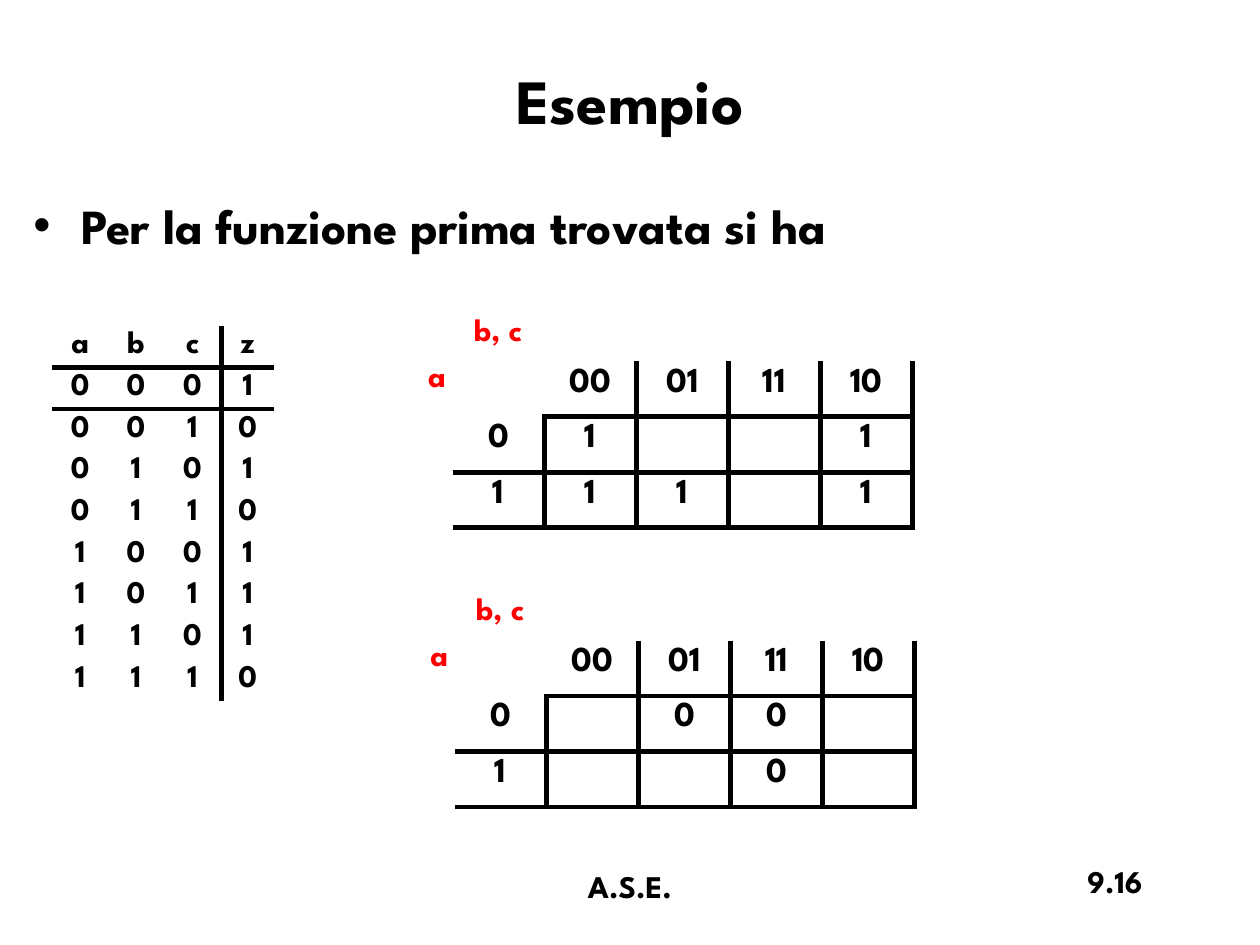
"""Build the slide with a truth table and its two Karnaugh maps."""
import pptx
import pptx.dml.color
import pptx.enum.text
import pptx.oxml
import pptx.oxml.ns
import pptx.util
from lxml import etree

COLORS = {"ink": "000000", "label": "FF0000"}
FONT = "League Spartan"
NO_STYLE = "{2D5ABB26-0587-4C30-8999-92F81FD0307C}"
ALIGN = pptx.enum.text.PP_ALIGN
ANCHOR = pptx.enum.text.MSO_ANCHOR
qn = pptx.oxml.ns.qn

prs = pptx.Presentation()
prs.slide_width = pptx.util.Inches(10)
prs.slide_height = pptx.util.Inches(7.5)
COL = prs.slide_width / 120
ROW = prs.slide_height / 90
s = prs.slides.add_slide(prs.slide_layouts[6])


def write(tf, text, size=18, color="ink", align=ALIGN.CENTER, wrap=True,
          anchor=ANCHOR.TOP, bullet=False):
    tf.word_wrap = wrap
    tf.vertical_anchor = anchor
    p = tf.paragraphs[0]
    p.alignment = align
    if bullet:
        pPr = p._p.get_or_add_pPr()
        pPr.set("marL", str(pptx.util.Inches(0.38)))
        pPr.set("indent", str(-pptx.util.Inches(0.38)))
        etree.SubElement(pPr, qn("a:buFont"), typeface="Arial")
        etree.SubElement(pPr, qn("a:buChar"), char="•")
    if not text:
        etree.SubElement(p._p, qn("a:endParaRPr"), sz=str(size * 100))
        return
    r = p.add_run()
    r.text = text
    r.font.name = FONT
    r.font.size = pptx.util.Pt(size)
    r.font.bold = True
    r.font.color.rgb = pptx.dml.color.RGBColor.from_string(COLORS[color])


def add_grid(x, y, widths, height, rows, size, right, bottom):
    tbl = s.shapes.add_table(len(rows), len(widths), int(x * COL), int(y * ROW),
                             int(sum(widths) * COL), int(len(rows) * height * ROW)).table
    tbl.first_row = tbl.horz_banding = False
    tbl._tbl.tblPr.find(qn("a:tableStyleId")).text = NO_STYLE
    for column, width in zip(tbl.columns, widths):
        column.width = int(width * COL)
    for i, values in enumerate(rows):
        tbl.rows[i].height = int(height * ROW)
        for j, value in enumerate(values):
            cell = tbl.cell(i, j)
            cell.fill.background()
            write(cell.text_frame, value, size=size)
            edges = {"lnL": j > 0 and right(i, j - 1), "lnR": right(i, j),
                     "lnT": i > 0 and bottom(i - 1, j), "lnB": bottom(i, j)}
            tcPr = cell._tc.get_or_add_tcPr()
            for k, edge in enumerate(e for e in edges if edges[e]):
                ln = etree.Element(qn("a:" + edge), w=str(pptx.util.Pt(3)))
                fill = etree.SubElement(ln, qn("a:solidFill"))
                etree.SubElement(fill, qn("a:srgbClr"), val=COLORS["ink"])
                tcPr.insert(k, ln)


maps = [
    (43.1, 34.4, 4.26, [["", "00", "01", "11", "10"],
                        ["0", "1", "", "", "1"],
                        ["1", "1", "1", "", "1"]]),
    (43.3, 61, 5.18, [["", "00", "01", "11", "10"],
                      ["0", "", "0", "0", ""],
                      ["1", "", "", "0", ""]]),
]
texts = [
    ("Esempio", 2, 2, 116, 15, dict(size=36, anchor=ANCHOR.MIDDLE)),
    ("Per la funzione prima trovata si ha", 2, 18, 116, 62,
     dict(size=28, align=ALIGN.LEFT, bullet=True)),
    ("9.16", 85, 81.5, 25, 6, dict(align=ALIGN.RIGHT)),
    ("A.S.E.", 41, 82, 38, 6, {}),
]
label = dict(color="label", align=ALIGN.LEFT, wrap=False)

outputs = "10101110"
truth = [list("abcz")] + [list(f"{n:03b}" + z) for n, z in enumerate(outputs)]
add_grid(5, 31, [5.3, 5.3, 5.5, 5], 3.97, truth, 18,
         lambda i, j: j == 2, lambda i, j: i == 0)

for x, y, height, rows in maps:
    add_grid(x, y, [8.76] * 5, height, rows, 20,
             lambda i, j: i + j > 0, lambda i, j: i + j > 0)
    texts.append(("a", x - 3.5, y - 1.1, 4.2, 4.8, label))
    texts.append(("b, c", x + 0.84, y - 5.5, 7.8, 4.8, label))

for text, x, y, w, h, style in texts:
    sp = s.shapes.add_textbox(int(x * COL), int(y * ROW), int(w * COL), int(h * ROW))
    write(sp.text_frame, text, **style)

prs.save("out.pptx")
